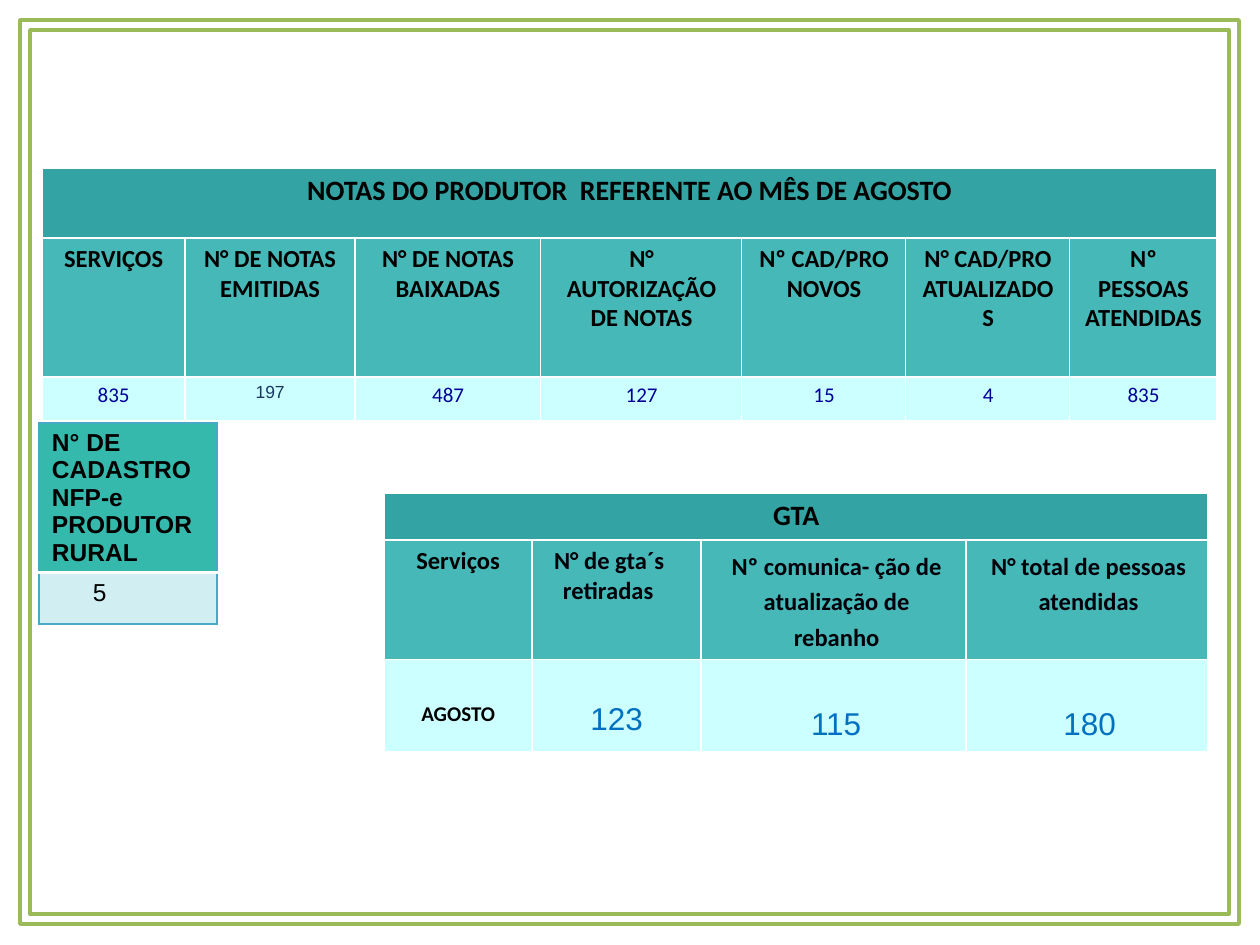
from lxml.etree import SubElement
from pptx import Presentation
from pptx.dml.color import RGBColor
from pptx.enum.text import PP_ALIGN
from pptx.oxml.ns import qn
from pptx.util import Pt

SCALE = 914400 / 126
COLORS = {
    "frame": "9BBA58", "title": "33A3A3", "header": "47B8B8", "value": "CCFFFF",
    "black": "000000", "ink": "000009", "navy": "000099", "slate": "17375E",
    "blue": "0070C0", "white": "FFFFFF", "edge": "46AAC4",
    "card": "35B9AC", "card_value": "D1EEF2",
}
WHITE_GRID = {side: ("white", 0.75) for side in "LRTB"}
CARD_SIDES = {"L": ("edge", 0.75), "R": ("edge", 0.75)}
CARD_TOP = {**CARD_SIDES, "T": ("edge", 0.75), "B": ("white", 2)}
CARD_BOTTOM = {**CARD_SIDES, "T": ("white", 2), "B": ("edge", 0.75)}
HEADER = dict(fill="header", size=14, bold=True)
NOTE_VALUE = dict(fill="value", size=12, color="navy")
GTA_VALUE = dict(fill="value", size=18, font="Arial", color="blue")


def px(n):
    return round(n * SCALE)


def rgb(name):
    return RGBColor.from_string(COLORS[name])


def add_frame(s):
    """Two nested rectangles drawn as one outline."""
    fb = None
    for left, top, right, bottom in ((20, 20, 1239, 924), (30, 30, 1229, 914)):
        if fb is None:
            fb = s.shapes.build_freeform(left, bottom, scale=SCALE)
        else:
            fb.move_to(left, bottom)
        fb.add_line_segments([(right, bottom), (right, top), (left, top)], close=True)
    sp = fb.convert_to_shape()
    sp.shadow.inherit = False
    sp.fill.background()
    sp.line.color.rgb = rgb("frame")
    sp.line.width = Pt(2)


def set_borders(cell, borders):
    """Put the border lines ahead of the fill, in schema order."""
    tcPr = cell._tc.get_or_add_tcPr()
    for i, side in enumerate("LRTB"):
        color, width = borders[side]
        ln = SubElement(tcPr, qn(f"a:ln{side}"), w=str(Pt(width)))
        fill = SubElement(ln, qn("a:solidFill"))
        SubElement(fill, qn("a:srgbClr"), val=COLORS[color])
        tcPr.insert(i, ln)


def fill_cell(cell, text, fill, size, font="Calibri", color="black", bold=False,
              align=PP_ALIGN.CENTER, spacing=None, indent=(0, 0),
              top=6, left=13, borders=WHITE_GRID):
    cell.fill.solid()
    cell.fill.fore_color.rgb = rgb(fill)
    set_borders(cell, borders)
    cell.margin_top, cell.margin_left = px(top), px(left)
    p = cell.text_frame.paragraphs[0]
    p.alignment = align
    if spacing:
        p.line_spacing = spacing
    if any(indent):
        pPr = p._p.get_or_add_pPr()
        pPr.set("marL", str(px(indent[0])))
        pPr.set("indent", str(px(indent[1])))
    r = p.add_run()
    r.text = text
    r.font.size, r.font.name, r.font.bold = Pt(size), font, bold
    r.font.color.rgb = rgb(color)


def add_grid(s, left, top, cols, rows):
    table = s.shapes.add_table(len(rows), len(cols), px(left), px(top),
                               px(sum(cols)), px(sum(rows))).table
    table.first_row = table.horz_banding = False
    for col, width in zip(table.columns, cols):
        col.width = px(width)
    for row, height in zip(table.rows, rows):
        row.height = px(height)
    return table


def add_title_row(table, text):
    last = len(table.columns) - 1
    table.cell(0, 0).merge(table.cell(0, last))
    for c in range(last + 1):
        set_borders(table.cell(0, c), WHITE_GRID) if c else fill_cell(
            table.cell(0, 0), text, "title", 16, bold=True)


def fill_row(table, row, entries, base):
    """Each entry is a text and the settings that differ from base."""
    for c, (text, changes) in enumerate(entries):
        fill_cell(table.cell(row, c), text, **{**base, **changes})


def add_notes_table(s):
    table = add_grid(s, 42, 168, (143, 170, 186, 201, 164, 164, 147), (70, 139, 44))
    add_title_row(table, "NOTAS DO PRODUTOR  REFERENTE AO MÊS DE AGOSTO")
    headers = ("SERVIÇOS", "N° DE NOTAS EMITIDAS", "N° DE NOTAS BAIXADAS",
               "N° AUTORIZAÇÃO DE NOTAS", "Nº CAD/PRO NOVOS",
               "N° CAD/PRO ATUALIZADOS", "Nº PESSOAS ATENDIDAS")
    fill_row(table, 1, [(text, {}) for text in headers], HEADER)
    fill_row(table, 2, [
        ("835", {}),
        ("197", dict(size=10, font="Arial", color="slate")),
        ("487", {}), ("127", {}), ("15", {}), ("4", {}), ("835", {}),
    ], NOTE_VALUE)


def add_gta_table(s):
    table = add_grid(s, 384, 493, (148, 169, 265, 242), (47, 119, 92))
    add_title_row(table, "GTA")
    fill_row(table, 1, [
        ("Serviços", {}),
        ("N° de gta´s retiradas",
         dict(color="ink", align=PP_ALIGN.LEFT, indent=(18, -9))),
        ("Nº comunica- ção de atualização de rebanho",
         dict(color="ink", spacing=1.2, indent=(6, 0))),
        ("N° total de pessoas atendidas",
         dict(color="ink", spacing=1.2, indent=(3, 0))),
    ], HEADER)
    fill_row(table, 2, [
        ("AGOSTO", dict(size=12, font="Calibri", color="black", bold=True, top=42)),
        ("123", dict(top=42)),
        ("115", dict(top=47, indent=(5, 0))),
        ("180", dict(top=47, indent=(5, 0))),
    ], GTA_VALUE)


def add_registration_table(s):
    table = add_grid(s, 39, 423, (178,), (150, 51))
    base = dict(size=14, font="Arial", align=PP_ALIGN.LEFT)
    fill_row(table, 0, [("N° DE CADASTRO NFP-e PRODUTOR RURAL",
                         dict(fill="card", bold=True, borders=CARD_TOP))], base)
    fill_row(table, 1, [("5", dict(fill="card_value", left=54,
                                   borders=CARD_BOTTOM))], base)


def main():
    prs = Presentation()
    prs.slide_width, prs.slide_height = px(1260), px(945)
    s = prs.slides.add_slide(prs.slide_layouts[6])
    add_frame(s)
    add_gta_table(s)
    add_notes_table(s)
    add_registration_table(s)
    prs.save("out.pptx")


if __name__ == "__main__":
    main()
